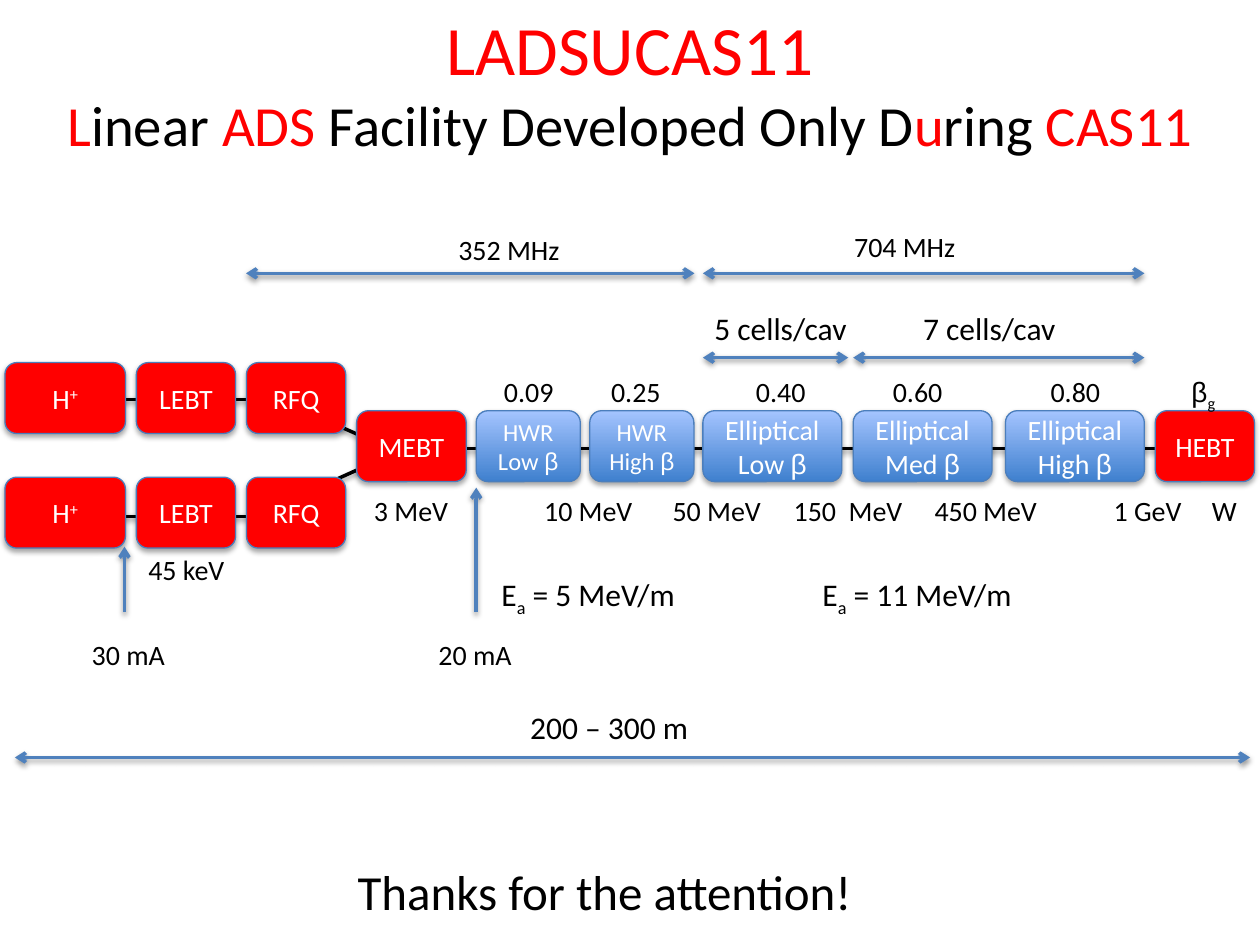
"""Build the LADSUCAS11 linac layout slide."""
from dataclasses import dataclass
from typing import NamedTuple

from lxml import etree
from pptx import Presentation
from pptx import util as u
from pptx.dml.color import RGBColor
from pptx.enum import shapes, text
from pptx.oxml import ns


@dataclass(frozen=True)
class Theme:
    black: str = "000000"
    white: str = "FFFFFF"
    red: str = "FF0000"
    arrow: str = "4F81BD"
    outline: str = "4B7EBC"
    cavity: tuple[str, str] = ("3F80CE", "A4C4FF")
    font: str = "Calibri"
    greek: str = "Arial"
    title: float = 39.6
    subtitle: float = 32.4
    closing: float = 28
    large: float = 18
    normal: float = 16
    small: float = 14


THEME = Theme()
BASELINES = {"^": "30000", "_": "-25000"}


class Section(NamedTuple):
    words: str
    left: float
    top: float
    width: float
    cavity: bool = False
    size: float = THEME.normal


class Label(NamedTuple):
    words: str
    left: float
    top: float
    width: float
    size: float = THEME.normal


class Line(NamedTuple):
    x1: float
    y1: float
    x2: float
    y2: float
    ends: tuple[str, ...] = ()


BOX_HEIGHT = 1.43
SOURCE_TOPS, MAIN_TOP = (7.31, 9.62), 8.28
ENERGY_TOP, BETA_TOP, CURRENT_TOP = 9.83, 7.42, 12.73
BOTH, TIP = ("headEnd", "tailEnd"), ("tailEnd",)

BEAM = [
    Line(1.27, 10.41, 6.02, 10.41),
    Line(1.55, 8.05, 6.3, 8.05),
    Line(5.61, 8.05, 8.03, 9.12),
    Line(5.61, 10.19, 8.03, 9.1),
    Line(8.05, 9.04, 24.05, 9.04),
]
SECTIONS = [
    Section(words, left, top, width)
    for top in SOURCE_TOPS
    for words, left, width in [("H|^+", 0.1, 2.43), ("LEBT", 2.75, 2), ("RFQ", 4.97, 2)]
] + [
    Section("MEBT", 7.19, MAIN_TOP, 2.21),
    Section("HWR\nLow |β", 9.6, MAIN_TOP, 2.1, True, THEME.small),
    Section("HWR\nHigh |β", 11.89, MAIN_TOP, 2.1, True, THEME.small),
    Section("Elliptical\nLow |β", 14.17, MAIN_TOP, 2.8, True),
    Section("Elliptical\nMed |β", 17.2, MAIN_TOP, 2.8, True),
    Section("Elliptical\nHigh |β", 20.27, MAIN_TOP, 2.8, True),
    Section("HEBT", 23.29, MAIN_TOP, 2),
]
ARROWS = [
    Line(4.96, 5.51, 14, 5.51, BOTH),
    Line(14.17, 5.51, 23.07, 5.51, BOTH),
    Line(14.17, 7.21, 17.1, 7.21, BOTH),
    Line(17.2, 7.21, 23.07, 7.21, BOTH),
    Line(0.3, 15.27, 25.2, 15.27, BOTH),
    Line(9.6, 12.34, 9.6, 9.83, TIP),
    Line(2.51, 12.34, 2.51, 11.02, TIP),
]
LABELS = [
    Label("352 MHz", 8.99, 4.57, 2.59),
    Label("704 MHz", 16.97, 4.5, 2.59),
    Label("5 cells/cav", 14.15, 6.1, 3.23, THEME.large),
    Label("7 cells/cav", 18.36, 6.1, 3.23, THEME.large),
    Label("0.09", 9.91, BETA_TOP, 1.52),
    Label("0.25", 12.07, BETA_TOP, 1.52),
    Label("0.40", 14.99, BETA_TOP, 1.52),
    Label("0.60", 17.75, BETA_TOP, 1.52),
    Label("0.80", 20.93, BETA_TOP, 1.52),
    Label("β|_g", 23.77, BETA_TOP, 1.02),
    Label("3 MeV", 7.29, ENERGY_TOP, 2.06),
    Label("10 MeV", 10.72, ENERGY_TOP, 2.34),
    Label("50 MeV", 13.31, ENERGY_TOP, 2.34),
    Label("150  MeV", 15.75, ENERGY_TOP, 2.77),
    Label("450 MeV", 18.59, ENERGY_TOP, 2.64),
    Label("1 GeV", 22.2, ENERGY_TOP, 1.93),
    Label("W", 24.18, ENERGY_TOP, 1.02),
    Label("45 keV", 2.74, 11.02, 2.11),
    Label("30 mA", 1.6, CURRENT_TOP, 2.01),
    Label("20 mA", 8.59, CURRENT_TOP, 2.01),
    Label("E|_a| = 5 MeV/m", 9.86, 11.46, 4.09, THEME.large),
    Label("E|_a| = 11 MeV/m", 16.33, 11.46, 4.52, THEME.large),
    Label("200 – 300 m", 10.44, 14.15, 3.73, THEME.large),
    Label("Thanks for the attention!", 6.96, 17.25, 10.64, THEME.closing),
]


def write(frame, words: str, *, size: float, color: str = THEME.black, align=None) -> None:
    """Append paragraphs of runs split at |, led by ^ (raised), _ (lowered) or * (red)."""
    for line in words.split("\n"):
        paragraph = frame.add_paragraph() if frame.text else frame.paragraphs[0]
        paragraph.alignment = align
        for piece in line.split("|"):
            run = paragraph.add_run()
            run.text = piece.lstrip("^_*")
            run.font.size = u.Pt(size)
            run.font.name = THEME.greek if piece == "β" else THEME.font
            run.font.color.rgb = RGBColor.from_string(THEME.red if piece[0] == "*" else color)
            if piece[0] in BASELINES:
                run.font._element.set("baseline", BASELINES[piece[0]])


def cast_shadow(shape, distance: float, opacity: int) -> None:
    """Give a shape or connector a soft shadow straight below it."""
    effects = etree.SubElement(shape._element.spPr, ns.qn("a:effectLst"))
    shadow = etree.SubElement(
        effects, ns.qn("a:outerShdw"), blurRad=str(u.Pt(3.1)), dist=str(u.Pt(distance)),
        dir="5400000", rotWithShape="0")
    black = etree.SubElement(shadow, ns.qn("a:srgbClr"), val=THEME.black)
    etree.SubElement(black, ns.qn("a:alpha"), val=str(opacity * 1000))


def draw_line(slide, line: Line, color: str) -> None:
    """Draw a straight line with its arrowheads."""
    ends = [u.Cm(value) for value in line[:4]]
    connector = slide.shapes.add_connector(shapes.MSO_CONNECTOR.STRAIGHT, *ends)
    connector.line.color.rgb = RGBColor.from_string(color)
    connector.line.width = u.Pt(2)
    for end in line.ends:
        etree.SubElement(connector.line._get_or_add_ln(), ns.qn(f"a:{end}"), type="arrow")
    cast_shadow(connector, 1.6, 38)


def draw_section(slide, section: Section) -> None:
    """Draw one accelerator section as a rounded box."""
    box = slide.shapes.add_shape(
        shapes.MSO_SHAPE.ROUNDED_RECTANGLE, u.Cm(section.left), u.Cm(section.top),
        u.Cm(section.width), u.Cm(BOX_HEIGHT))
    if section.cavity:
        box.fill.gradient()
        box.fill.gradient_angle = 90
        for stop, color in zip(box.fill.gradient_stops, THEME.cavity):
            stop.color.rgb = RGBColor.from_string(color)
    else:
        box.fill.solid()
        box.fill.fore_color.rgb = RGBColor.from_string(THEME.red)
    box.line.color.rgb = RGBColor.from_string(THEME.outline)
    box.line.width = u.Pt(0.75)
    cast_shadow(box, 1.8, 35)
    box.text_frame.vertical_anchor = text.MSO_ANCHOR.MIDDLE
    write(box.text_frame, section.words, size=section.size, color=THEME.white,
          align=text.PP_ALIGN.CENTER)


def draw_label(slide, label: Label) -> None:
    """Place one free-standing label."""
    height = u.Pt(label.size * 1.22) + u.Cm(0.25)
    frame = slide.shapes.add_textbox(
        u.Cm(label.left), u.Cm(label.top), u.Cm(label.width), height).text_frame
    frame.word_wrap = False
    frame.auto_size = text.MSO_AUTO_SIZE.SHAPE_TO_FIT_TEXT
    write(frame, label.words, size=label.size)


def set_title(title) -> None:
    """Fill the title placeholder with the name and what it stands for."""
    title.left, title.top, title.width, title.height = map(u.Cm, (0, 0.76, 25.4, 3.18))
    frame = title.text_frame
    frame.auto_size = text.MSO_AUTO_SIZE.NONE
    frame.vertical_anchor = text.MSO_ANCHOR.MIDDLE
    frame.margin_top, frame.margin_bottom = u.Cm(0), u.Cm(1.4)
    write(frame, "*LADSUCAS11", size=THEME.title, align=text.PP_ALIGN.CENTER)
    write(frame, "*L|inear|* ADS |Facility Developed Only D|*u|ring |*CAS11",
          size=THEME.subtitle, align=text.PP_ALIGN.CENTER)


def main() -> None:
    """Assemble and save the slide."""
    deck = Presentation()
    deck.slide_width, deck.slide_height = u.Cm(25.4), u.Cm(19.05)
    slide = deck.slides.add_slide(deck.slide_layouts[5])
    set_title(slide.shapes.title)
    for line in BEAM:
        draw_line(slide, line, THEME.black)
    for section in SECTIONS:
        draw_section(slide, section)
    for line in ARROWS:
        draw_line(slide, line, THEME.arrow)
    for label in LABELS:
        draw_label(slide, label)
    deck.save("out.pptx")


if __name__ == "__main__":
    main()
